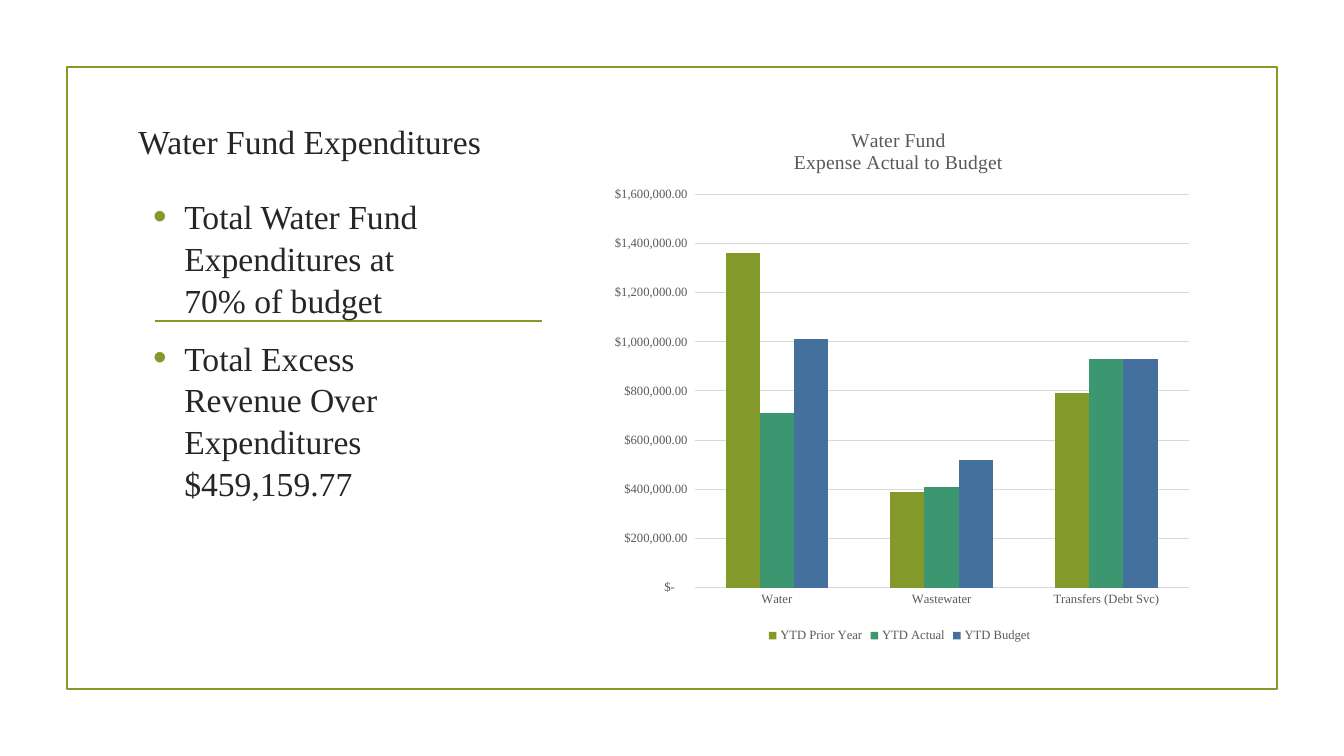
from dataclasses import dataclass

from lxml import etree
from pptx import Presentation, util as u
from pptx.chart.data import CategoryChartData
from pptx.dml.color import RGBColor
from pptx.enum import chart as ch, shapes, text
from pptx.oxml import ns, parse_xml


@dataclass(frozen=True)
class Theme:
    font: str = "Times New Roman"
    ink: str = "262626"
    muted: str = "595959"
    grid: str = "D9D9D9"
    accent: str = "83992A"
    series: tuple = ("83992A", "3C9770", "44709D")
    body_size: float = 24
    chart_title_size: float = 14
    label_size: float = 9
    rule_width: float = 1.25
    grid_width: float = 0.75


class SlideBuilder:
    """Places elements by percent of the slide's width and height."""

    def __init__(self, deck, theme):
        self.theme = theme
        self.width, self.height = deck.slide_width, deck.slide_height
        self.slide = deck.slides.add_slide(deck.slide_layouts[6])

    def box(self, left, top, width, height):
        return (int(self.width * left / 100), int(self.height * top / 100),
                int(self.width * width / 100), int(self.height * height / 100))

    def style_font(self, font, size, color):
        font.name, font.size, font.bold = self.theme.font, u.Pt(size), False
        font.color.rgb = RGBColor.from_string(color)

    def style_line(self, line, color, width):
        line.color.rgb = RGBColor.from_string(color)
        line.width = u.Pt(width)

    def frame(self, *area):
        border = self.slide.shapes.add_shape(shapes.MSO_SHAPE.RECTANGLE, *self.box(*area))
        border.shadow.inherit = False
        border.fill.background()
        self.style_line(border.line, self.theme.accent, self.theme.rule_width)

    def rule(self, left, right, row):
        x1, y, length, _ = self.box(left, row, right - left, 0)
        divider = self.slide.shapes.add_connector(
            shapes.MSO_CONNECTOR.STRAIGHT, x1, y, x1 + length, y)
        self.style_line(divider.line, self.theme.accent, self.theme.rule_width)
        etree.SubElement(divider._element.spPr, ns.qn("a:effectLst"))

    def text_area(self, area, lines, anchor):
        frame = self.slide.shapes.add_textbox(*self.box(*area)).text_frame
        frame.word_wrap = True
        frame.vertical_anchor = anchor
        frame.text = "\n".join(lines)
        return frame.paragraphs

    def heading(self, area, wording):
        title, = self.text_area(area, [wording], text.MSO_ANCHOR.BOTTOM)
        title.alignment = text.PP_ALIGN.CENTER
        self.style_font(title.runs[0].font, self.theme.body_size, self.theme.ink)

    def bullets(self, area, points):
        for index, point in enumerate(self.text_area(area, points, text.MSO_ANCHOR.TOP)):
            point.line_spacing = 1.04
            point.space_before = u.Pt(5 if index else 0)
            point.space_after = u.Pt(6)
            props = point._p.get_or_add_pPr()
            props.set("marL", str(u.Inches(0.31)))
            props.set("indent", str(-u.Inches(0.31)))
            color = etree.SubElement(props, ns.qn("a:buClr"))
            etree.SubElement(color, ns.qn("a:srgbClr"), val=self.theme.accent)
            etree.SubElement(props, ns.qn("a:buSzPct"), val="115000")
            etree.SubElement(props, ns.qn("a:buFont"), typeface="Arial")
            etree.SubElement(props, ns.qn("a:buChar"), char="•")
            self.style_font(point.runs[0].font, self.theme.body_size, self.theme.ink)

    def column_chart(self, area, title_lines, categories, series):
        theme = self.theme
        data = CategoryChartData()
        data.categories = categories
        for name, values in series.items():
            data.add_series(name, values)
        chart = self.slide.shapes.add_chart(
            ch.XL_CHART_TYPE.COLUMN_CLUSTERED, *self.box(*area), data).chart
        self.style_font(chart.font, theme.label_size, theme.muted)

        # Title
        title = chart.chart_title
        title.text_frame.text = "\n".join(title_lines)
        for line in title.text_frame.paragraphs:
            self.style_font(line.runs[0].font, theme.chart_title_size, theme.muted)
        title.include_in_layout = False

        # Columns
        plot = chart.plots[0]
        plot.gap_width, plot.overlap, plot.vary_by_categories = 182, 0, False
        for columns, color in zip(plot.series, theme.series):
            columns.format.fill.solid()
            columns.format.fill.fore_color.rgb = RGBColor.from_string(color)

        # Axes
        for axis in (chart.category_axis, chart.value_axis):
            axis.major_tick_mark = axis.minor_tick_mark = ch.XL_TICK_MARK.NONE
            self.style_font(axis.tick_labels.font, theme.label_size, theme.muted)
        self.style_line(chart.category_axis.format.line, theme.grid, theme.grid_width)
        amounts = chart.value_axis
        amounts.format.line.fill.background()
        self.style_line(amounts.major_gridlines.format.line, theme.grid, theme.grid_width)
        amounts.minimum_scale, amounts.maximum_scale = 0, 1600000
        amounts.major_unit = 200000
        amounts.tick_labels.number_format = (
            '_("$"* #,##0.00_);_("$"* \\(#,##0.00\\);_("$"* "-"??_);_(@_)')
        amounts.tick_labels.number_format_is_linked = False

        # Legend
        chart.has_legend = True
        chart.legend.position = ch.XL_LEGEND_POSITION.BOTTOM
        chart.legend.include_in_layout = False
        self.style_font(chart.legend.font, theme.label_size, theme.muted)

        # Fixed places for the title and the plot
        self.place(title._element, title._element.find(ns.qn("c:tx")), x=0.32, y=0.03)
        self.place(plot._element.getparent(), None, x=0.16, y=0.16, w=0.82, h=0.73)

    def place(self, parent, before, **shares):
        for old in parent.findall(ns.qn("c:layout")):
            parent.remove(old)
        target = '<c:layoutTarget val="inner"/>' if "w" in shares else ""
        modes = '<c:xMode val="edge"/><c:yMode val="edge"/>'
        sizes = "".join(f'<c:{key} val="{value}"/>' for key, value in shares.items())
        layout = parse_xml(f'<c:layout {ns.nsdecls("c")}><c:manualLayout>'
                           f'{target}{modes}{sizes}</c:manualLayout></c:layout>')
        if before is None:
            parent.insert(0, layout)
        else:
            before.addnext(layout)


def main():
    deck = Presentation()
    deck.slide_width, deck.slide_height = u.Inches(13.33), u.Inches(7.5)
    page = SlideBuilder(deck, Theme())

    # Border and divider
    page.frame(5, 8.9, 90, 82.3)
    page.rule(11.5, 40.3, 42.5)

    # Message
    page.heading((6.9, 6.7, 32.3, 15.3), "Water Fund Expenditures")
    page.bullets((10.65, 25.1, 22.95, 62.3), [
        "Total Water Fund Expenditures at 70% of budget",
        "Total Excess Revenue Over Expenditures $459,159.77",
    ])

    # Spending against budget
    page.column_chart(
        (44.5, 14.3, 44.85, 71.3),
        ["Water Fund", "Expense Actual to Budget"],
        ["Water", "Wastewater", "Transfers (Debt Svc)"],
        {
            "YTD Prior Year": (1360000, 390000, 790000),
            "YTD Actual": (710000, 410000, 930000),
            "YTD Budget": (1010000, 520000, 930000),
        },
    )
    deck.save("out.pptx")


if __name__ == "__main__":
    main()
